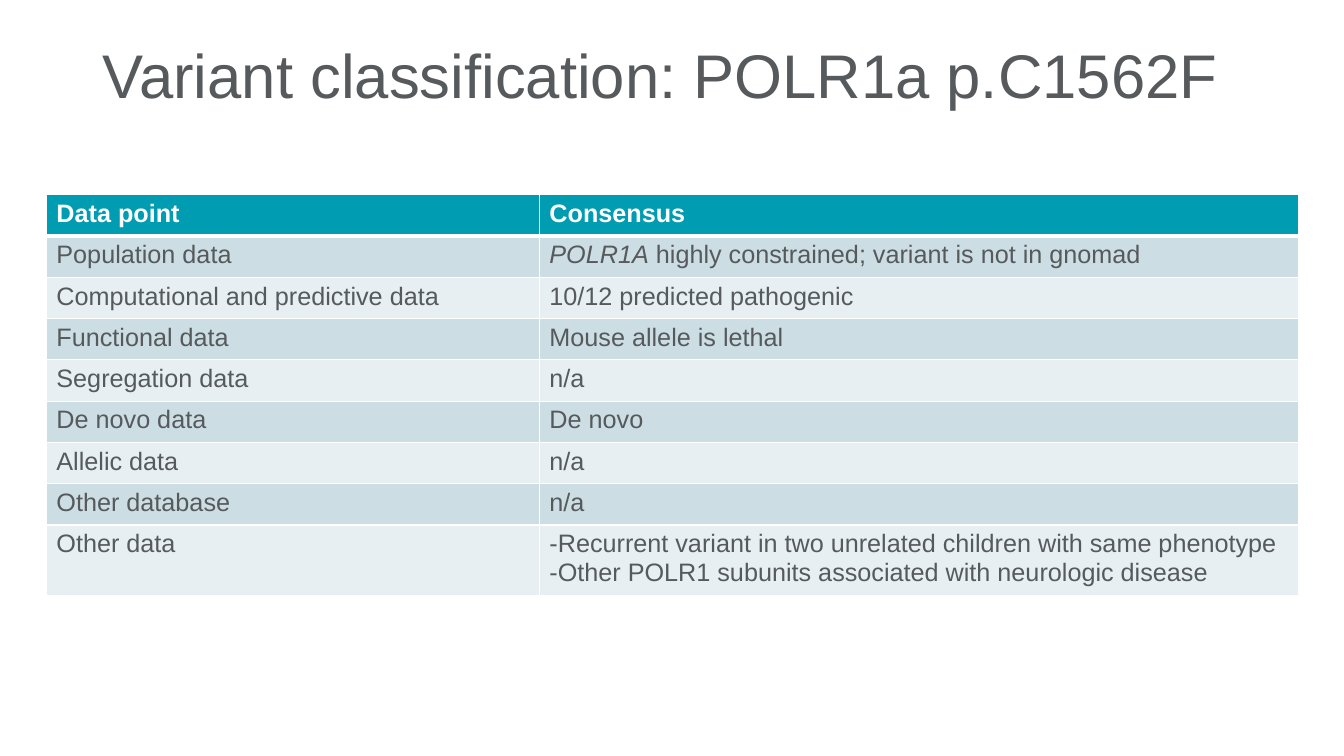
"""Build the variant classification slide with its consensus table."""
from lxml import etree
from pptx import Presentation
from pptx.dml.color import RGBColor
from pptx.enum.text import MSO_ANCHOR, PP_ALIGN
from pptx.oxml.ns import qn
from pptx.util import Inches, Pt

TOP = MSO_ANCHOR.TOP
LEFT = PP_ALIGN.LEFT

COLORS = {
    "text": "565A5C",
    "white": "FFFFFF",
    "header": "009CB1",
    "band_dark": "CCDEE4",
    "band_light": "E7EFF2",
}

ROWS = [
    ("Data point", "Consensus"),
    ("Population data",
     [("POLR1A", True), (" highly constrained; variant is not in gnomad", False)]),
    ("Computational and predictive data", "10/12 predicted pathogenic"),
    ("Functional data", "Mouse allele is lethal"),
    ("Segregation data", "n/a"),
    ("De novo data", "De novo"),
    ("Allelic data", "n/a"),
    ("Other database", "n/a"),
    ("Other data",
     "-Recurrent variant in two unrelated children with same phenotype\n"
     "-Other POLR1 subunits associated with neurologic disease"),
]


class SlideBuilder:
    def __init__(self, prs, font="Arial"):
        self.s = prs.slides.add_slide(prs.slide_layouts[6])
        self.font = font

    def style(self, p, size, color, bold=False):
        p.alignment = LEFT
        p.font.name = self.font
        p.font.size = Pt(size)
        p.font.bold = bold
        p.font.color.rgb = RGBColor.from_string(COLORS[color])

    def title(self, text, x, y, w, h):
        box = self.s.shapes.add_textbox(Inches(x), Inches(y), Inches(w), Inches(h))
        tf = box.text_frame
        tf.word_wrap = True
        tf.vertical_anchor = TOP
        p = tf.paragraphs[0]
        p.text = text
        p.line_spacing = 0.9
        self.style(p, 44, "text")

    def border(self, cell, side, width):
        tc_pr = cell._tc.get_or_add_tcPr()
        ln = etree.SubElement(tc_pr, qn(f"a:ln{side}"), w=str(Pt(width)))
        fill = etree.SubElement(ln, qn("a:solidFill"))
        etree.SubElement(fill, qn("a:srgbClr"), val=COLORS["white"])

    def cell(self, cell, content, row):
        header = row == 0
        widths = {"L": 1, "R": 1, "T": 3 if row == 1 else 1, "B": 3 if header else 1}
        for side, width in widths.items():
            self.border(cell, side, width)
        band = "header" if header else "band_dark" if row % 2 else "band_light"
        cell.fill.solid()
        cell.fill.fore_color.rgb = RGBColor.from_string(COLORS[band])
        tf = cell.text_frame
        if isinstance(content, str):
            tf.text = content
        else:
            for text, italic in content:
                r = tf.paragraphs[0].add_run()
                r.text = text
                r.font.italic = italic
        for p in tf.paragraphs:
            self.style(p, 18, "white" if header else "text", header)

    def table(self, rows, x, y, col_widths, row_heights):
        table = self.s.shapes.add_table(
            len(rows), len(col_widths), Inches(x), Inches(y),
            Inches(sum(col_widths)), Inches(sum(row_heights))).table
        for col, width in zip(table.columns, col_widths):
            col.width = Inches(width)
        for i, (contents, height) in enumerate(zip(rows, row_heights)):
            table.rows[i].height = Inches(height)
            for j, content in enumerate(contents):
                self.cell(table.cell(i, j), content, i)


def main():
    prs = Presentation()
    prs.slide_width = Inches(13.33)
    prs.slide_height = Inches(7.5)
    slide = SlideBuilder(prs)
    slide.title("Variant classification: POLR1a p.C1562F", 0.92, 0.4, 11.5, 1.09)
    slide.table(ROWS, 0.46, 1.93, [4.89, 7.53], [0.41] * 8 + [0.66])
    prs.save("out.pptx")


if __name__ == "__main__":
    main()
